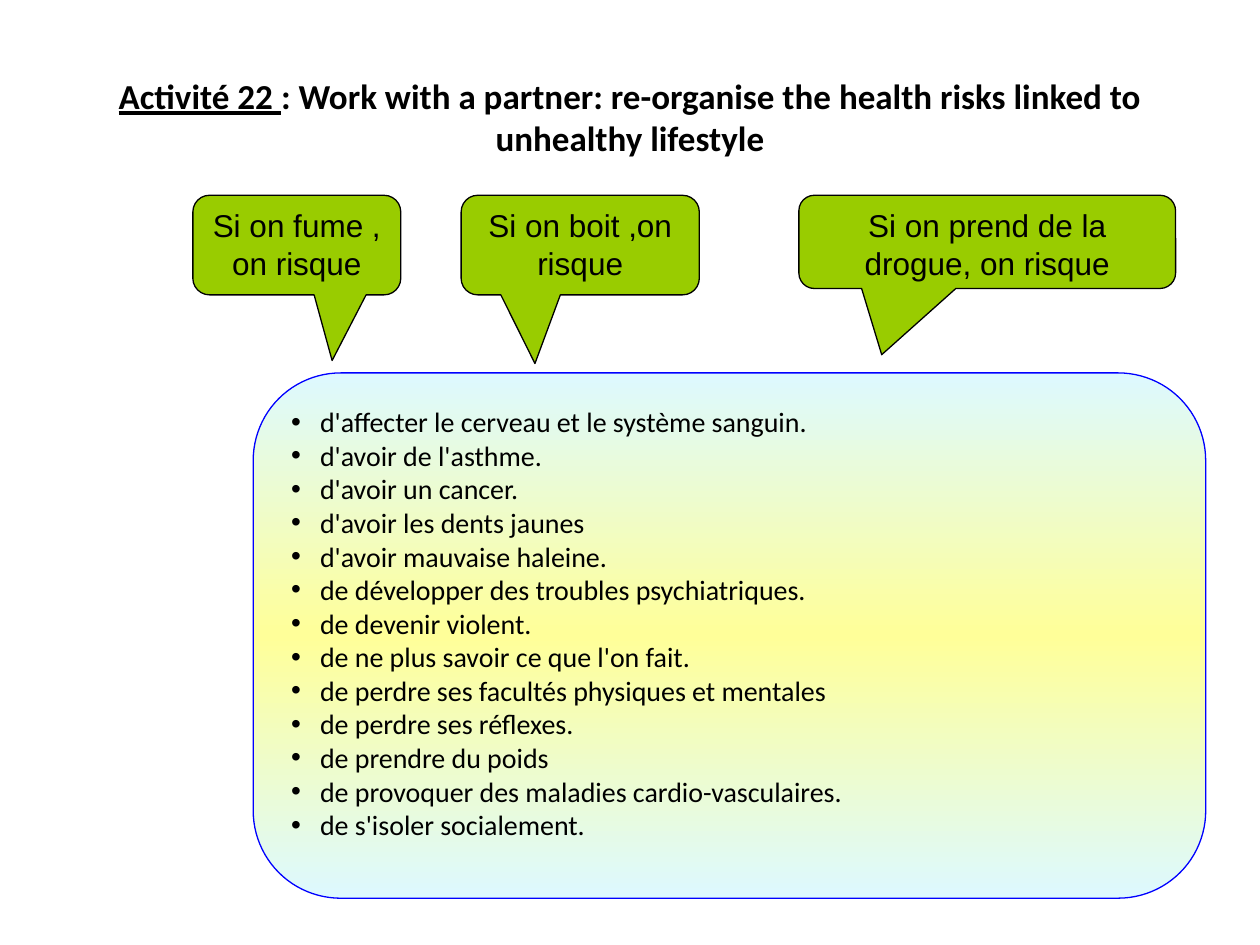
from copy import deepcopy

from pptx import Presentation
from pptx.dml.color import RGBColor
from pptx.enum.shapes import MSO_SHAPE as Shape
from pptx.enum.text import MSO_ANCHOR as Anchor, PP_ALIGN as Align
from pptx.oxml.ns import qn
from pptx.util import Pt

COLOURS = {
    "ink": "000000",
    "callout": "99CC00",
    "edge": "0000FF",
    "sky": "DDF9FF",
    "lemon": "FFFF99",
}

CALLOUTS = [
    ("Si on fume , on risque", (110.2, 111.6, 118.8, 56.9), (0.17, 1.16)),
    ("Si on boit ,on risque", (263.5, 111.6, 136.1, 56.9), (-0.19, 1.19)),
    ("Si on prend de la drogue, on risque", (456.5, 111.6, 215.3, 53.3), (-0.28, 1.21)),
]

RISKS = [
    "d'affecter le cerveau et le système sanguin.",
    "d'avoir de l'asthme.",
    "d'avoir un cancer.",
    "d'avoir les dents jaunes",
    "d'avoir mauvaise haleine.",
    "de développer des troubles psychiatriques.",
    "de devenir violent.",
    "de ne plus savoir ce que l'on fait.",
    "de perdre ses facultés physiques et mentales",
    "de perdre ses réflexes.",
    "de prendre du poids",
    "de provoquer des maladies cardio-vasculaires.",
    "de s'isoler socialement.",
]


def colour(name):
    return RGBColor.from_string(COLOURS[name])


def points(box):
    return [Pt(length) for length in box]


def style_font(font, name, size):
    font.name = name
    font.size = Pt(size)
    font.color.rgb = colour("ink")


def add_panel(page, kind, box, edge):
    panel = page.shapes.add_shape(kind, *points(box))
    panel.shadow.inherit = False
    panel.line.color.rgb = colour(edge)
    panel.line.width = Pt(0.75)
    panel.text_frame.word_wrap = True
    panel.text_frame.vertical_anchor = Anchor.TOP
    return panel


def add_title(page, box):
    frame = page.shapes.add_textbox(*points(box)).text_frame
    frame.word_wrap = True
    frame.vertical_anchor = Anchor.MIDDLE
    para = frame.paragraphs[0]
    para.alignment = Align.CENTER
    parts = [
        ("Activité 22 ", True),
        (": Work with a partner: re-organise the health risks linked to unhealthy lifestyle", False),
    ]
    for text, underlined in parts:
        span = para.add_run()
        span.text = text
        style_font(span.font, "Calibri", 20)
        span.font.bold = True
        span.font.underline = underlined


def add_callout(page, text, box, tip):
    callout = add_panel(page, Shape.ROUNDED_RECTANGULAR_CALLOUT, box, "ink")
    callout.adjustments[0], callout.adjustments[1] = tip
    callout.fill.solid()
    callout.fill.fore_color.rgb = colour("callout")
    para = callout.text_frame.paragraphs[0]
    para.text = text
    para.alignment = Align.CENTER
    style_font(para.runs[0].font, "Arial", 18)


def fill_with_bands(panel):
    panel.fill.gradient()
    panel.fill.gradient_angle = 270
    stops = panel.fill.gradient_stops
    stop_list = panel.fill._xPr.find(qn("a:gradFill")).find(qn("a:gsLst"))
    stop_list.insert(1, deepcopy(stop_list[0]))
    stops = panel.fill.gradient_stops
    for stop, position, name in zip(stops, (0, 0.5, 1), ("sky", "lemon", "sky")):
        stop.position = position
        stop.color.rgb = colour(name)


def add_bullet(para, indent):
    properties = para._p.get_or_add_pPr()
    properties.set("marL", str(Pt(indent)))
    properties.set("indent", str(-Pt(indent)))
    font = properties.makeelement(qn("a:buFont"), {"typeface": "Arial"})
    mark = properties.makeelement(qn("a:buChar"), {"char": "•"})
    properties.extend([font, mark])


def add_risk_list(page, box):
    panel = add_panel(page, Shape.ROUNDED_RECTANGLE, box, "edge")
    fill_with_bands(panel)
    frame = panel.text_frame
    frame.text = "\n".join(RISKS)
    for para in frame.paragraphs:
        add_bullet(para, 16.5)
        para.alignment = Align.LEFT
        style_font(para.runs[0].font, "Calibri", 16)


def main():
    deck = Presentation()
    deck.slide_width, deck.slide_height = Pt(720), Pt(540)
    page = deck.slides.add_slide(deck.slide_layouts[6])
    add_title(page, (36, 21.6, 648, 90))
    for text, box, tip in CALLOUTS:
        add_callout(page, text, box, tip)
    add_risk_list(page, (144.7, 213.1, 544.3, 300.2))
    deck.save("out.pptx")


if __name__ == "__main__":
    main()
